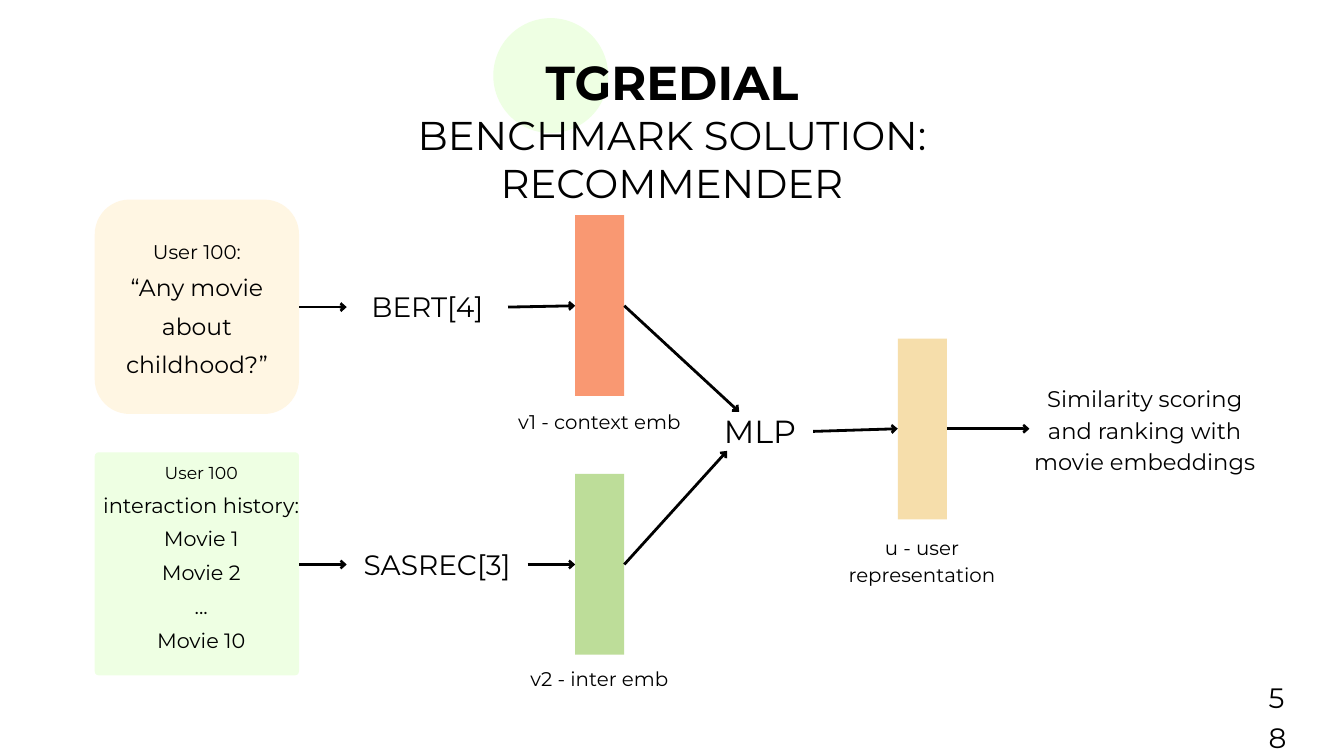
from dataclasses import dataclass

from lxml.etree import SubElement
from pptx import Presentation
from pptx.dml.color import RGBColor
from pptx.enum.shapes import MSO_CONNECTOR, MSO_SHAPE
from pptx.enum.text import MSO_ANCHOR, MSO_AUTO_SIZE, PP_ALIGN
from pptx.oxml.ns import qn
from pptx.util import Emu, Pt

FONT = "Montserrat"
INK = "000000"


@dataclass
class Box:
    left: int
    top: int
    wide: int
    high: int


@dataclass
class Form:
    kind: MSO_SHAPE
    box: Box
    fill: str
    curve: float = 0


@dataclass
class Line:
    text: str
    size: float
    lead: float
    bold: bool = False


@dataclass
class Label:
    box: Box
    lines: list[Line]


@dataclass
class Arrow:
    start: tuple[int, int]
    end: tuple[int, int]


def px(count: int) -> Emu:
    return Emu(count * 9144)


def tint(code: str) -> RGBColor:
    return RGBColor.from_string(code)


def place(box: Box) -> tuple[Emu, ...]:
    return px(box.left), px(box.top), px(box.wide), px(box.high)


def write(para, text: str, *, size: float, lead: float, bold: bool = False) -> None:
    para.alignment = PP_ALIGN.CENTER
    para.line_spacing = Pt(lead)
    para.space_before = para.space_after = Pt(0)
    run = para.add_run()
    run.text = text
    run.font.name = FONT
    run.font.size = Pt(size)
    run.font.bold = bold
    run.font.color.rgb = tint(INK)


def fill_text(frame, lines: list[Line]) -> None:
    frame.auto_size = MSO_AUTO_SIZE.NONE
    frame.word_wrap = True
    frame.vertical_anchor = MSO_ANCHOR.TOP
    frame.margin_left = frame.margin_right = 0
    frame.margin_top = frame.margin_bottom = 0
    for rank, line in enumerate(lines):
        para = frame.add_paragraph() if rank else frame.paragraphs[0]
        write(para, line.text, size=line.size, lead=line.lead, bold=line.bold)


def draw_form(slide, form: Form):
    shape = slide.shapes.add_shape(form.kind, *place(form.box))
    shape.shadow.inherit = False
    shape.fill.solid()
    shape.fill.fore_color.rgb = tint(form.fill)
    shape.line.fill.background()
    if form.curve:
        shape.adjustments[0] = form.curve
    return shape


def draw_label(slide, label: Label) -> None:
    shape = slide.shapes.add_textbox(*place(label.box))
    fill_text(shape.text_frame, label.lines)


def draw_arrow(slide, arrow: Arrow) -> None:
    ends = [px(part) for part in arrow.start + arrow.end]
    link = slide.shapes.add_connector(MSO_CONNECTOR.STRAIGHT, *ends)
    link.line.color.rgb = tint(INK)
    link.line.width = Pt(3)
    SubElement(link.line._get_or_add_ln(), qn("a:tailEnd"), type="arrow", w="med", len="sm")
    SubElement(link._element.spPr, qn("a:effectLst"))


def bar(left: int, top: int, fill: str) -> Form:
    return Form(MSO_SHAPE.RECTANGLE, Box(left, top, 73, 269), fill)


HALO = Form(MSO_SHAPE.OVAL, Box(734, 27, 171, 171), "EEFFE3")
TITLE = Label(Box(368, 79, 1264, 156), [
    Line("TGREDIAL", 51, 61.2, True),
    Line("BENCHMARK SOLUTION: RECOMMENDER", 43, 51.6),
])
FORMS = [
    bar(856, 320, "F99872"),
    bar(856, 705, "BDDD99"),
    bar(1336, 504, "F6DEAB"),
    Form(MSO_SHAPE.ROUNDED_RECTANGLE, Box(141, 297, 304, 319), "FFF6E3", 0.17),
    Form(MSO_SHAPE.ROUNDED_RECTANGLE, Box(141, 673, 304, 332), "EEFFE3", 0.02),
]
LABELS = [
    Label(Box(157, 344, 272, 212), [
        Line("User 100:", 21.2, 34.5),
        Line("“Any movie about childhood?”", 25.2, 41),
    ]),
    Label(Box(141, 677, 317, 289), [
        Line("User 100", 18.5, 30.2),
        Line("interaction history:", 22.5, 36.7),
        *(Line(text, 22.2, 36.1) for text in ("Movie 1", "Movie 2", "...", "Movie 10")),
    ]),
    Label(Box(516, 431, 240, 51), [Line("BERT[4]", 30, 36)]),
    Label(Box(516, 814, 269, 51), [Line("SASREC[3]", 30, 36)]),
    Label(Box(756, 597, 272, 45), [Line("v1 - context emb", 21.2, 34.5)]),
    Label(Box(756, 979, 272, 45), [Line("v2 - inter emb", 21.2, 34.5)]),
    Label(Box(1051, 612, 160, 58), [Line("MLP", 34.2, 41.1)]),
    Label(Box(1236, 791, 272, 80), [Line("u - user representation", 21.2, 29.6)]),
    Label(Box(1532, 566, 343, 139), [
        Line("Similarity scoring and ranking with movie embeddings", 24.2, 33.9),
    ]),
    Label(Box(1888, 1005, 17, 24), [Line("58", 30, 42)]),
]
ARROWS = [
    Arrow((445, 457), (516, 457)),
    Arrow((756, 457), (856, 455)),
    Arrow((445, 840), (516, 840)),
    Arrow((785, 840), (856, 840)),
    Arrow((929, 455), (1100, 613)),
    Arrow((929, 840), (1082, 671)),
    Arrow((1210, 642), (1336, 638)),
    Arrow((1409, 638), (1532, 638)),
]


def main() -> None:
    deck = Presentation()
    deck.slide_width, deck.slide_height = px(2000), px(1125)
    slide = deck.slides.add_slide(deck.slide_layouts[5])
    title = slide.shapes.title
    title.left, title.top, title.width, title.height = place(TITLE.box)
    fill_text(title.text_frame, TITLE.lines)
    halo = draw_form(slide, HALO)
    title._element.addprevious(halo._element)
    for form in FORMS:
        draw_form(slide, form)
    for label in LABELS:
        draw_label(slide, label)
    for arrow in ARROWS:
        draw_arrow(slide, arrow)
    deck.save("out.pptx")


if __name__ == "__main__":
    main()
